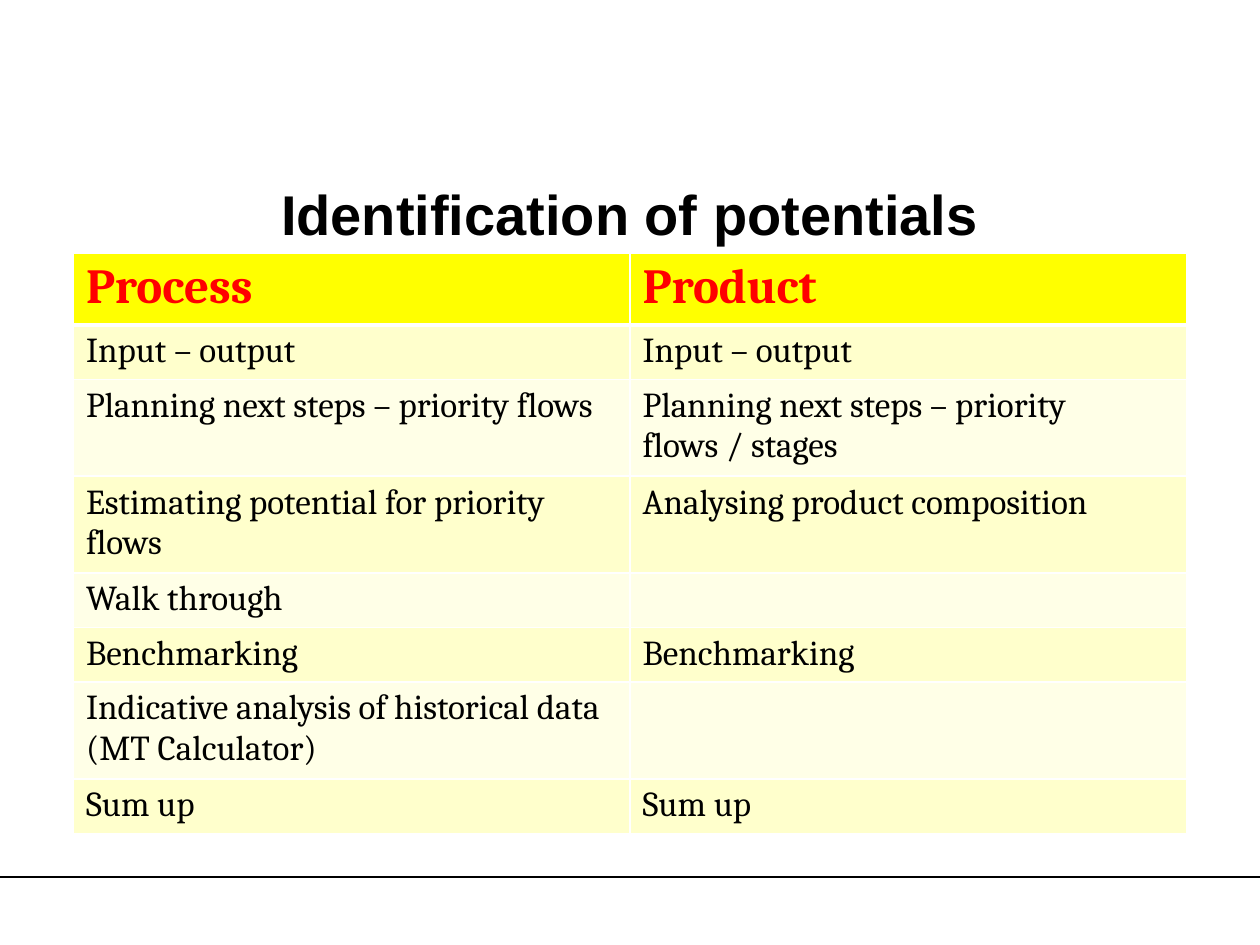
from lxml import etree
from pptx import Presentation
from pptx import util as u
from pptx.dml.color import RGBColor
from pptx.enum import shapes, text
from pptx.oxml.ns import qn

BLACK = RGBColor(0, 0, 0)
WHITE = RGBColor(0xFF, 0xFF, 0xFF)
RED = RGBColor(0xFF, 0, 0)
YELLOW = RGBColor(0xFF, 0xFF, 0)
BANDS = (RGBColor(0xFF, 0xFF, 0xE7), RGBColor(0xFF, 0xFF, 0xCC))

LEFT, WIDTH = u.Cm(1.48), u.Cm(22.44)
TALL, SHORT, HEADER = 1.95, 1.1, 1.45
ROWS = [
    (HEADER, "Process", "Product"),
    (SHORT, "Input – output", "Input – output"),
    (TALL, "Planning next steps – priority flows",
     "Planning next steps – priority flows / stages"),
    (TALL, "Estimating potential for priority flows",
     "Analysing product composition"),
    (SHORT, "Walk through", ""),
    (SHORT, "Benchmarking", "Benchmarking"),
    (TALL, "Indicative analysis of historical data (MT Calculator)", ""),
    (SHORT, "Sum up", "Sum up"),
]


def add_run(p, words, font, size, color, bold):
    r = p.add_run()
    r.text = words
    r.font.name = font
    r.font.size = u.Pt(size)
    r.font.bold = bold
    r.font.color.rgb = color


def add_rule(s, y):
    c = s.shapes.add_connector(shapes.MSO_CONNECTOR.STRAIGHT,
                               0, y, u.Cm(25.4), y)
    c.line.color.rgb = BLACK
    c.line.width = u.Pt(1.5)
    etree.SubElement(c._element.spPr, qn("a:effectLst"))


def set_title(s, words):
    sp = s.shapes.title
    sp.left, sp.top, sp.width, sp.height = LEFT, u.Cm(3.7), WIDTH, u.Cm(1.4)
    tf = sp.text_frame
    tf.margin_left = tf.margin_right = tf.margin_top = tf.margin_bottom = 0
    tf.vertical_anchor = text.MSO_ANCHOR.MIDDLE
    tf.auto_size = text.MSO_AUTO_SIZE.NONE
    tf.word_wrap = True
    p = tf.paragraphs[0]
    p.alignment = text.PP_ALIGN.CENTER
    p.line_spacing = u.Pt(32)
    add_run(p, words, "Arial", 32, BLACK, True)


def set_borders(cell, top, bottom):
    tc_pr = cell._tc.get_or_add_tcPr()
    for side, points in (("L", 1), ("R", 1), ("T", top), ("B", bottom)):
        ln = etree.SubElement(tc_pr, qn(f"a:ln{side}"), w=str(u.Pt(points)))
        fill = etree.SubElement(ln, qn("a:solidFill"))
        etree.SubElement(fill, qn("a:srgbClr"), val=str(WHITE))


def fill_cell(cell, words, row):
    header = row == 0
    set_borders(cell, 3 if row == 1 else 1, 3 if header else 1)
    cell.fill.solid()
    cell.fill.fore_color.rgb = YELLOW if header else BANDS[row % 2]
    if words:
        add_run(cell.text_frame.paragraphs[0], words, "Cambria",
                28 if header else 20, RED if header else BLACK, header)


def add_methods_table(s):
    height = u.Cm(sum(row[0] for row in ROWS))
    table = s.shapes.add_table(len(ROWS), 2, LEFT, u.Cm(5.1),
                               WIDTH, height).table
    for i, (row_height, *cells) in enumerate(ROWS):
        table.rows[i].height = u.Cm(row_height)
        for j, words in enumerate(cells):
            fill_cell(table.cell(i, j), words, i)


def main():
    prs = Presentation()
    prs.slide_width, prs.slide_height = u.Cm(25.4), u.Cm(19.05)
    s = prs.slides.add_slide(prs.slide_layouts[5])
    add_rule(s, u.Cm(17.68))
    set_title(s, "Identification of potentials")
    add_methods_table(s)
    prs.save("out.pptx")


if __name__ == "__main__":
    main()
